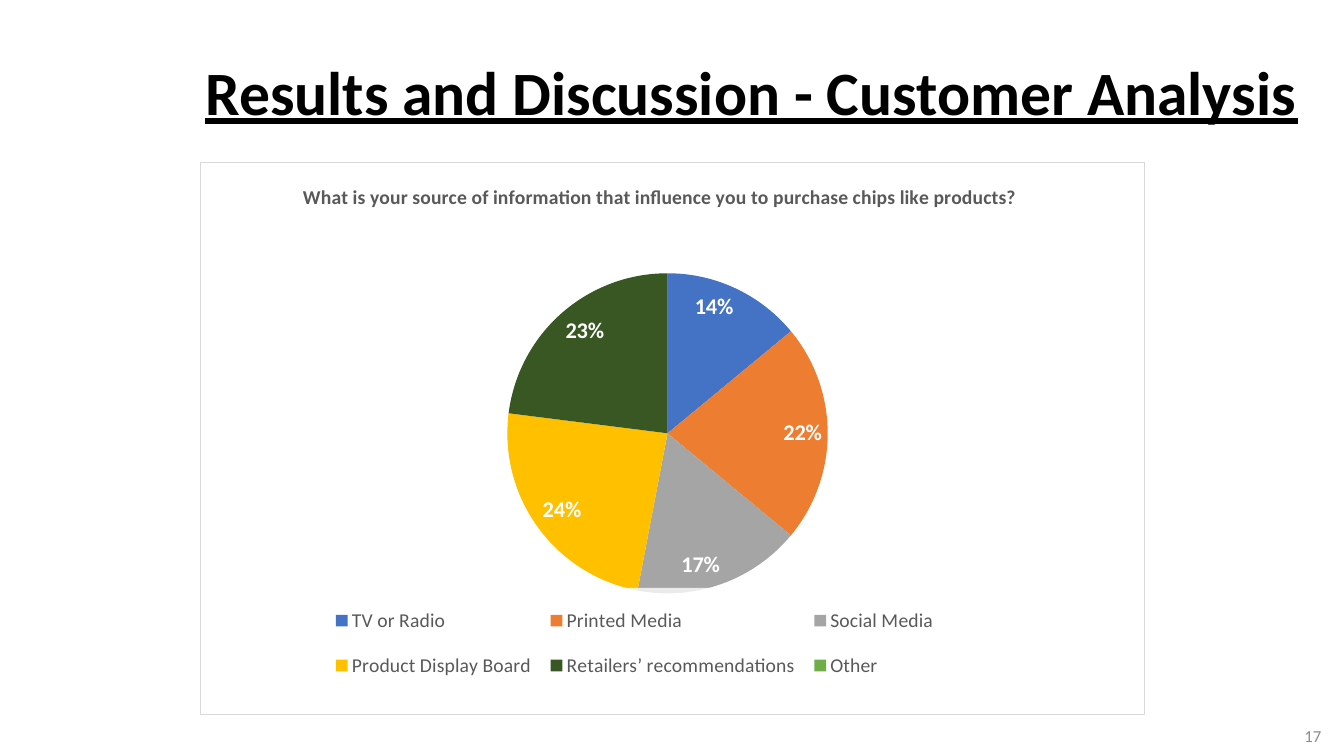
import lxml.etree
import pptx
import pptx.chart.data
import pptx.dml.color
import pptx.enum.chart
import pptx.enum.text
import pptx.oxml
import pptx.oxml.ns
import pptx.util

Pt = pptx.util.Pt
qn = pptx.oxml.ns.qn

FONT = "Calibri"
HEADING = "Results and Discussion - Customer Analysis"
PAGE_NUMBER = "17"
QUESTION = "What is your source of information that influence you to purchase chips like products?"
SOURCES = [
    ("TV or Radio", 14, "4472C4"),
    ("Printed Media", 22, "ED7D31"),
    ("Social Media", 17, "A5A5A5"),
    ("Product Display Board", 24, "FFC000"),
    ("Retailers’ recommendations", 23, "385723"),
    ("Other", 0, "70AD47"),
]
HEADING_BOX = (123, 16, 828, 104)
NUMBER_BOX = (735, 511, 216, 29)
CHART_BOX = (142.56, 116, 675.36, 395)
PLOT_AREA = {"x": 0.07, "y": 0.2, "w": 0.85, "h": 0.58}
QUESTION_AREA = {"x": 0.105, "y": 0.03}
LEGEND_AREA = {"x": 0.13, "y": 0.77, "w": 0.66, "h": 0.2}


def color(value):
    return pptx.dml.color.RGBColor.from_string(value)


def set_font(font, size, fill, bold=False, underline=False):
    font.name = FONT
    font.size = Pt(size)
    font.bold = bold
    font.underline = underline
    font.color.rgb = color(fill)


def add_text(page, text, place, align, spacing=1.0, **style):
    frame = page.shapes.add_textbox(*map(Pt, place)).text_frame
    frame.word_wrap = True
    frame.vertical_anchor = pptx.enum.text.MSO_ANCHOR.MIDDLE
    para = frame.paragraphs[0]
    para.alignment = align
    para.line_spacing = spacing
    span = para.add_run()
    span.text = text
    set_font(span.font, **style)


def chart_xml(body):
    spaces = pptx.oxml.ns.nsdecls("c", "a")
    tag, rest = body.split(">", 1)
    return pptx.oxml.parse_xml(f"{tag} {spaces}>{rest}")


def set_layout(parent, area, before, target=""):
    for old in parent.findall(qn("c:layout")):
        parent.remove(old)
    modes = "".join(f'<c:{key}Mode val="edge"/>' for key in area if key in "xy")
    sizes = "".join(f'<c:{key} val="{value}"/>' for key, value in area.items())
    layout = chart_xml(f"<c:layout><c:manualLayout>{target}{modes}{sizes}</c:manualLayout></c:layout>")
    parent.find(qn(before)).addprevious(layout)


def add_pie(page):
    data = pptx.chart.data.CategoryChartData()
    data.categories = [name for name, share, fill in SOURCES]
    data.add_series("Series 1", [share for name, share, fill in SOURCES])
    kind = pptx.enum.chart.XL_CHART_TYPE.PIE
    chart = page.shapes.add_chart(kind, *map(Pt, CHART_BOX), data).chart
    set_font(chart.font, 10, "000000")
    chart.plots[0].vary_by_categories = True

    series = chart.plots[0].series[0]
    for index, (name, share, fill) in enumerate(SOURCES):
        slice_fill = series.points[index].format.fill
        slice_fill.solid()
        slice_fill.fore_color.rgb = color(fill)

    labels = series.data_labels
    labels.show_percentage = True
    labels.show_value = False
    labels.position = pptx.enum.chart.XL_LABEL_POSITION.INSIDE_END
    set_font(labels.font, 16, "FFFFFF", bold=True)
    label_list = series._element.find(qn("c:dLbls"))
    for index, (name, share, fill) in enumerate(SOURCES):
        if share == 0:
            label_list.insert(0, chart_xml(f'<c:dLbl><c:idx val="{index}"/><c:delete val="1"/></c:dLbl>'))

    title = chart.chart_title
    title.include_in_layout = False
    para = title.text_frame.paragraphs[0]
    span = para.add_run()
    span.text = QUESTION
    set_font(span.font, 14, "595959", bold=True)
    set_layout(title._element, QUESTION_AREA, "c:overlay")

    chart.has_legend = True
    legend = chart.legend
    legend.position = pptx.enum.chart.XL_LEGEND_POSITION.BOTTOM
    legend.include_in_layout = False
    set_font(legend.font, 14, "595959")
    set_layout(legend._element, LEGEND_AREA, "c:overlay")
    legend._element.find(qn("c:txPr")).addprevious(chart_xml(
        '<c:spPr><a:solidFill><a:srgbClr val="FFFFFF"><a:alpha val="78000"/></a:srgbClr></a:solidFill></c:spPr>'))

    space = chart._chartSpace
    set_layout(space.find(".//" + qn("c:plotArea")), PLOT_AREA, "c:pieChart",
               '<c:layoutTarget val="inner"/>')
    space.find(qn("c:txPr")).addprevious(chart_xml(
        '<c:spPr><a:solidFill><a:srgbClr val="FFFFFF"/></a:solidFill>'
        f'<a:ln w="{Pt(0.75)}"><a:solidFill><a:srgbClr val="D9D9D9"/></a:solidFill></a:ln></c:spPr>'))


def main():
    deck = pptx.Presentation()
    deck.slide_width = Pt(960)
    deck.slide_height = Pt(540)
    page = deck.slides.add_slide(deck.slide_layouts[6])
    align = pptx.enum.text.PP_ALIGN
    add_text(page, PAGE_NUMBER, NUMBER_BOX, align.RIGHT, size=12, fill="8C8C8C")
    add_pie(page)
    add_text(page, HEADING, HEADING_BOX, align.CENTER, spacing=0.9,
             size=44, fill="000000", bold=True, underline=True)
    deck.save("out.pptx")


if __name__ == "__main__":
    main()
